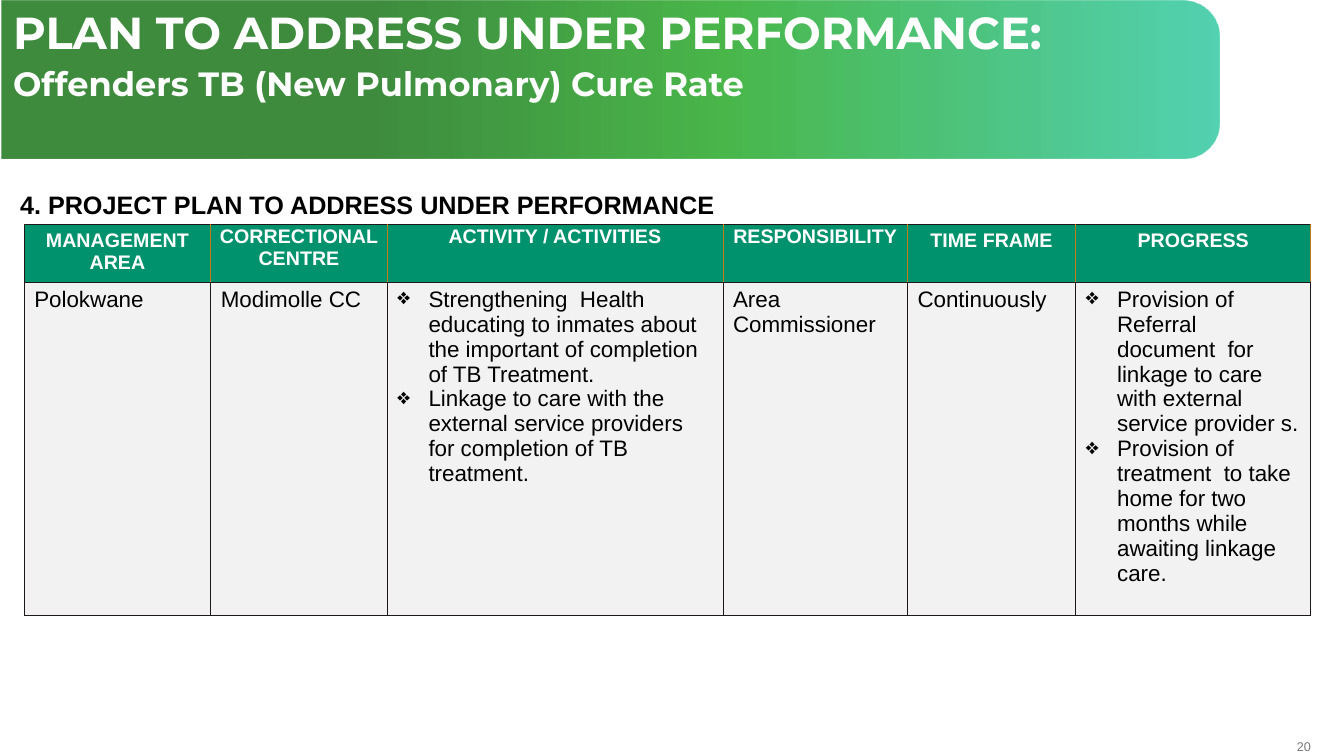
from dataclasses import dataclass

from lxml.etree import SubElement
from pptx import Presentation
from pptx.dml.color import RGBColor
from pptx.enum.shapes import MSO_SHAPE
from pptx.enum.text import MSO_ANCHOR, MSO_AUTO_SIZE, PP_ALIGN
from pptx.oxml.ns import qn
from pptx.util import Inches, Pt

BLACK, WHITE = "000000", "FFFFFF"
HEADER_GREEN, BODY_GREY = "00926C", "F2F2F2"
DARK_LINE, ORANGE_LINE = "1E1918", "BF7B17"
NORMAL_MARGINS = (0.1, 0.05, 0.1, 0.05)
TIGHT_MARGINS = (0.01, 0.01, 0.01, 0)
HEADER_HEIGHT, BODY_HEIGHT = 0.57, 3.3


@dataclass(frozen=True)
class Column:
    heading: str
    width: float
    entries: tuple[str, ...]
    margins: tuple[float, ...] = NORMAL_MARGINS


COLUMNS = (
    Column("MANAGEMENT AREA", 1.85, ("Polokwane",)),
    Column("CORRECTIONAL CENTRE", 1.75, ("Modimolle CC",), TIGHT_MARGINS),
    Column("ACTIVITY / ACTIVITIES", 3.33, (
        "Strengthening  Health educating to inmates about the important of completion of TB Treatment.",
        "Linkage to care with the external service providers for completion of TB treatment.",
    ), TIGHT_MARGINS),
    Column("RESPONSIBILITY", 1.83, ("Area Commissioner",), TIGHT_MARGINS),
    Column("TIME FRAME", 1.67, ("Continuously",)),
    Column("PROGRESS", 2.33, (
        "Provision of Referral document  for linkage to care with external service provider s.",
        "Provision of treatment  to take home for two months while awaiting linkage care.",
    )),
)


def color(value: str) -> RGBColor:
    return RGBColor.from_string(value)


def apply_format(target, values: dict) -> None:
    for name, value in values.items():
        setattr(target, name, value)


def place(shape, left: float, top: float, width: float, height: float) -> None:
    apply_format(shape, {"left": Inches(left), "top": Inches(top),
                         "width": Inches(width), "height": Inches(height)})


def write(frame, lines: tuple[str, ...], size: float, text_color: str, bold: bool = False,
          font: str = "Arial", align=PP_ALIGN.LEFT) -> None:
    frame.text = "\n".join(lines)
    for paragraph in frame.paragraphs:
        paragraph.alignment = align
        for run in paragraph.runs:
            apply_format(run.font, {"name": font, "size": Pt(size), "bold": bold})
            run.font.color.rgb = color(text_color)


def add_bullet(paragraph) -> None:
    properties = paragraph._p.get_or_add_pPr()
    properties.set("marL", str(Inches(0.31)))
    properties.set("indent", str(-Inches(0.31)))
    SubElement(properties, qn("a:buChar"), char="❖")


def add_solid_fill(parent, value: str):
    fill = SubElement(parent, qn("a:solidFill"))
    return SubElement(fill, qn("a:srgbClr"), val=value)


def format_cell(cell, fill: str, margins: tuple[float, ...], borders: dict[str, str]) -> None:
    sides = ("margin_left", "margin_top", "margin_right", "margin_bottom")
    apply_format(cell, {side: Inches(margin) for side, margin in zip(sides, margins)})
    properties = cell._tc.get_or_add_tcPr()
    for tag, line_color in borders.items():
        add_solid_fill(SubElement(properties, qn(f"a:{tag}"), w=str(Pt(0.5))), line_color)
    cell.fill.solid()
    cell.fill.fore_color.rgb = color(fill)


def add_banner(slide) -> None:
    banner = slide.shapes.add_shape(MSO_SHAPE.ROUND_2_SAME_RECTANGLE, Inches(5.27),
                                    Inches(-5.25), Inches(1.57), Inches(12.08))
    banner.rotation = 90
    banner.adjustments[0] = 0.233
    banner.adjustments[1] = 0
    banner.shadow.inherit = False
    banner.line.fill.background()
    # Translucent gradient that runs left to right once the shape is turned
    banner.fill.gradient()
    gradient = banner._element.spPr.find(qn("a:gradFill"))
    gradient.set("rotWithShape", "1")
    for child in list(gradient):
        gradient.remove(child)
    stops = SubElement(gradient, qn("a:gsLst"))
    for position, value, opacity in ((30, "006600", 75), (59, "009900", 71), (100, "00BC8D", 67)):
        stop = SubElement(stops, qn("a:gs"), pos=str(position * 1000))
        stop_color = SubElement(stop, qn("a:srgbClr"), val=value)
        SubElement(stop_color, qn("a:alpha"), val=str(opacity * 1000))
    SubElement(gradient, qn("a:lin"), ang=str(270 * 60000), scaled="0")
    # Behind the title
    slide.shapes._spTree.insert(2, banner._element)


def add_title(slide) -> None:
    title = slide.shapes.title
    place(title, 0.03, 0.06, 11.98, 0.57)
    frame = title.text_frame
    write(frame, ("PLAN TO ADDRESS UNDER PERFORMANCE:", "Offenders TB (New Pulmonary) Cure Rate"),
          32, WHITE, True, "Montserrat")
    apply_format(frame, {"word_wrap": True, "auto_size": MSO_AUTO_SIZE.NONE,
                         "vertical_anchor": MSO_ANCHOR.TOP})
    for paragraph in frame.paragraphs:
        apply_format(paragraph, {"line_spacing": 0.9, "space_after": Pt(6)})
    frame.paragraphs[1].runs[0].font.size = Pt(24)


def add_label(slide, box: tuple[float, ...], text: str, frame_format: dict, **text_format) -> None:
    label = slide.shapes.add_textbox(*map(Inches, box))
    apply_format(label.text_frame, {"word_wrap": True, **frame_format})
    write(label.text_frame, (text,), **text_format)


def add_plan_table(slide) -> None:
    width = sum(column.width for column in COLUMNS)
    table = slide.shapes.add_table(2, len(COLUMNS), Inches(0.24), Inches(2.23), Inches(width),
                                   Inches(HEADER_HEIGHT + BODY_HEIGHT)).table
    table.rows[0].height = Inches(HEADER_HEIGHT)
    table.rows[1].height = Inches(BODY_HEIGHT)
    body_borders = dict.fromkeys(("lnL", "lnR", "lnT", "lnB"), DARK_LINE)
    for index, column in enumerate(COLUMNS):
        table.columns[index].width = Inches(column.width)
        header, body = table.cell(0, index), table.cell(1, index)
        header_borders = {**body_borders, "lnR": ORANGE_LINE}
        if index:
            header_borders["lnL"] = ORANGE_LINE
        write(header.text_frame, (column.heading,), 14, WHITE, True, align=PP_ALIGN.CENTER)
        format_cell(header, HEADER_GREEN, column.margins, header_borders)
        write(body.text_frame, column.entries, 16, BLACK)
        format_cell(body, BODY_GREY, NORMAL_MARGINS, body_borders)
        if len(column.entries) > 1:
            for paragraph in body.text_frame.paragraphs:
                add_bullet(paragraph)


def main() -> None:
    presentation = Presentation()
    presentation.slide_width, presentation.slide_height = Inches(13.33), Inches(7.5)
    slide = presentation.slides.add_slide(presentation.slide_layouts[5])

    # Heading area
    add_banner(slide)
    add_title(slide)

    # Project plan
    add_label(slide, (0.1, 1.83, 9.65, 0.4), "4. PROJECT PLAN TO ADDRESS UNDER PERFORMANCE", {},
              size=18, text_color=BLACK, bold=True)
    add_plan_table(slide)

    # Page number
    no_margins = dict.fromkeys(("margin_left", "margin_top", "margin_right", "margin_bottom"), 0)
    add_label(slide, (12.61, 7.33, 0.39, 0.15), "20",
              {**no_margins, "vertical_anchor": MSO_ANCHOR.MIDDLE},
              size=9, text_color="77787B", align=PP_ALIGN.RIGHT)
    presentation.save("out.pptx")


if __name__ == "__main__":
    main()
